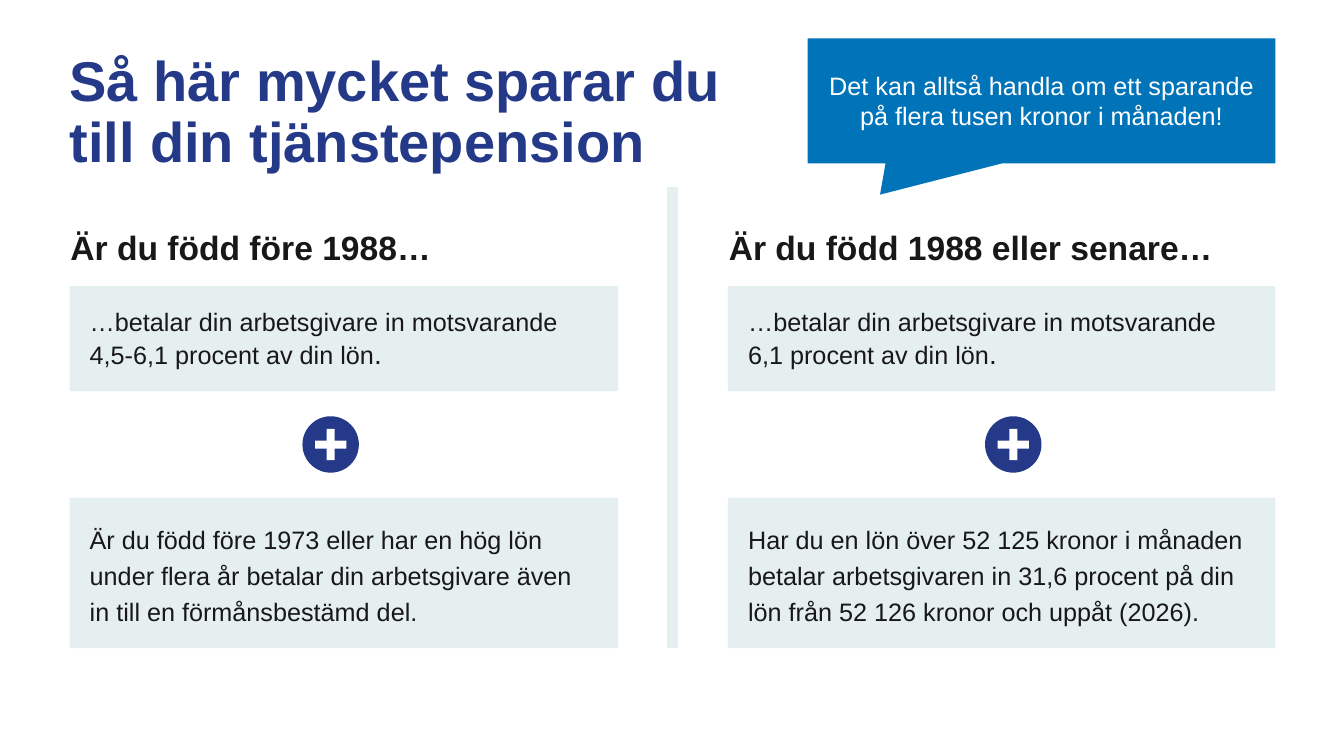
from pptx import Presentation
from pptx.dml.color import RGBColor
from pptx.enum.shapes import MSO_CONNECTOR, MSO_SHAPE
from pptx.enum.text import MSO_ANCHOR, MSO_AUTO_SIZE, PP_ALIGN
from pptx.oxml.ns import qn
from pptx.util import Inches, Pt

NAVY, BLUE, MIST = "243987", "0173B8", "E5EFF0"
INK, WHITE = "181818", "FFFFFF"

# Column left edge, heading left and width, box width, plus left, texts
COLUMNS = [
    (0.69, 0.6, 3.9, 5.44, 3.0,
     "Är du född före 1988…",
     "…betalar din arbetsgivare in motsvarande 4,5-6,1 procent av din lön",
     "Är du född före 1973 eller har en hög lön under flera år betalar "
     "din arbetsgivare även in till en förmånsbestämd del."),
    (7.22, 7.13, 5.14, 5.43, 9.77,
     "Är du född 1988 eller senare…",
     "…betalar din arbetsgivare in motsvarande 6,1 procent av din lön",
     "Har du en lön över 52 125 kronor i månaden betalar arbetsgivaren in "
     "31,6 procent på din lön från 52 126 kronor och uppåt (2026)."),
]


def rgb(value):
    return RGBColor.from_string(value)


def add_filled(shapes, kind, left, top, width, height, color):
    shape = shapes.add_shape(kind, Inches(left), Inches(top),
                             Inches(width), Inches(height))
    shape.shadow.inherit = False
    shape.fill.solid()
    shape.fill.fore_color.rgb = rgb(color)
    shape.line.fill.background()
    return shape


def set_margins(frame, margin):
    frame.margin_left = frame.margin_right = Inches(margin)
    frame.margin_top = frame.margin_bottom = Inches(margin)


def write(frame, text, size, color, bold=False, align=PP_ALIGN.LEFT, spacing=1.0):
    paragraph = frame.paragraphs[0]
    paragraph.text = text
    paragraph.alignment = align
    paragraph.line_spacing = spacing
    font = paragraph.font
    font.name, font.size, font.bold = "Arial", Pt(size), bold
    font.color.rgb = rgb(color)
    return paragraph


def add_title(slide, text):
    frame = slide.shapes.add_textbox(Inches(0.69), Inches(0.4),
                                     Inches(7), Inches(1.46)).text_frame
    frame.word_wrap = True
    frame.vertical_anchor = MSO_ANCHOR.MIDDLE
    set_margins(frame, 0)
    write(frame, text, 40, NAVY, bold=True, spacing=0.9)


def add_heading(slide, left, width, text):
    frame = slide.shapes.add_textbox(Inches(left), Inches(2.2),
                                     Inches(width), Inches(0.5)).text_frame
    frame.word_wrap = False
    frame.auto_size = MSO_AUTO_SIZE.SHAPE_TO_FIT_TEXT
    write(frame, text, 24, INK, bold=True)


def add_fact_box(slide, left, top, width, height, text, spacing=1.0):
    box = add_filled(slide.shapes, MSO_SHAPE.RECTANGLE, left, top, width, height, MIST)
    frame = box.text_frame
    frame.word_wrap = True
    frame.auto_size = MSO_AUTO_SIZE.SHAPE_TO_FIT_TEXT
    frame.vertical_anchor = MSO_ANCHOR.TOP
    set_margins(frame, 0.2)
    return write(frame, text, 18, INK, spacing=spacing)


def add_plus(slide, left, top):
    size, thickness, length = 0.56, 0.08, 0.31
    shapes = slide.shapes.add_group_shape().shapes
    add_filled(shapes, MSO_SHAPE.OVAL, left, top, size, size, NAVY)
    for rotation in (0, 270):
        bar = add_filled(shapes, MSO_SHAPE.RECTANGLE,
                         left + (size - thickness) / 2, top + (size - length) / 2,
                         thickness, length, WHITE)
        bar.rotation = rotation


def add_callout(slide, text):
    callout = add_filled(slide.shapes, MSO_SHAPE.RECTANGULAR_CALLOUT,
                         8.01, 0.38, 4.64, 1.24, BLUE)
    callout.adjustments[0] = -0.345
    callout.adjustments[1] = 0.751
    frame = callout.text_frame
    frame.word_wrap = True
    frame.vertical_anchor = MSO_ANCHOR.MIDDLE
    set_margins(frame, 0.08)
    write(frame, text, 18, WHITE, align=PP_ALIGN.CENTER)


def add_divider(slide):
    x = Inches(6.67)
    line = slide.shapes.add_connector(MSO_CONNECTOR.STRAIGHT,
                                      x, Inches(1.86), x, Inches(6.43))
    line.line.color.rgb = rgb(MIST)
    line.line.width = Pt(8)
    properties = line._element.spPr
    properties.append(properties.makeelement(qn("a:effectLst"), {}))


def main():
    presentation = Presentation()
    presentation.slide_width = Inches(13.33)
    presentation.slide_height = Inches(7.5)
    slide = presentation.slides.add_slide(presentation.slide_layouts[6])

    add_title(slide, "Så här mycket sparar du\vtill din tjänstepension")

    # One column for each birth-year group
    for (left, heading_left, heading_width, width, plus_left,
         heading, base_share, extra_share) in COLUMNS:
        add_heading(slide, heading_left, heading_width, heading)
        paragraph = add_fact_box(slide, left, 2.84, width, 1.04, base_share)
        full_stop = paragraph.add_run()
        full_stop.text = "."
        full_stop.font.size = Pt(20)
        add_plus(slide, plus_left, 4.13)
        add_fact_box(slide, left, 4.94, width, 1.49, extra_share, spacing=1.2)

    # Conclusion and column divider
    add_callout(slide, "Det kan alltså handla om ett sparande på flera "
                       "tusen kronor i månaden!")
    add_divider(slide)
    presentation.save("out.pptx")


if __name__ == "__main__":
    main()
